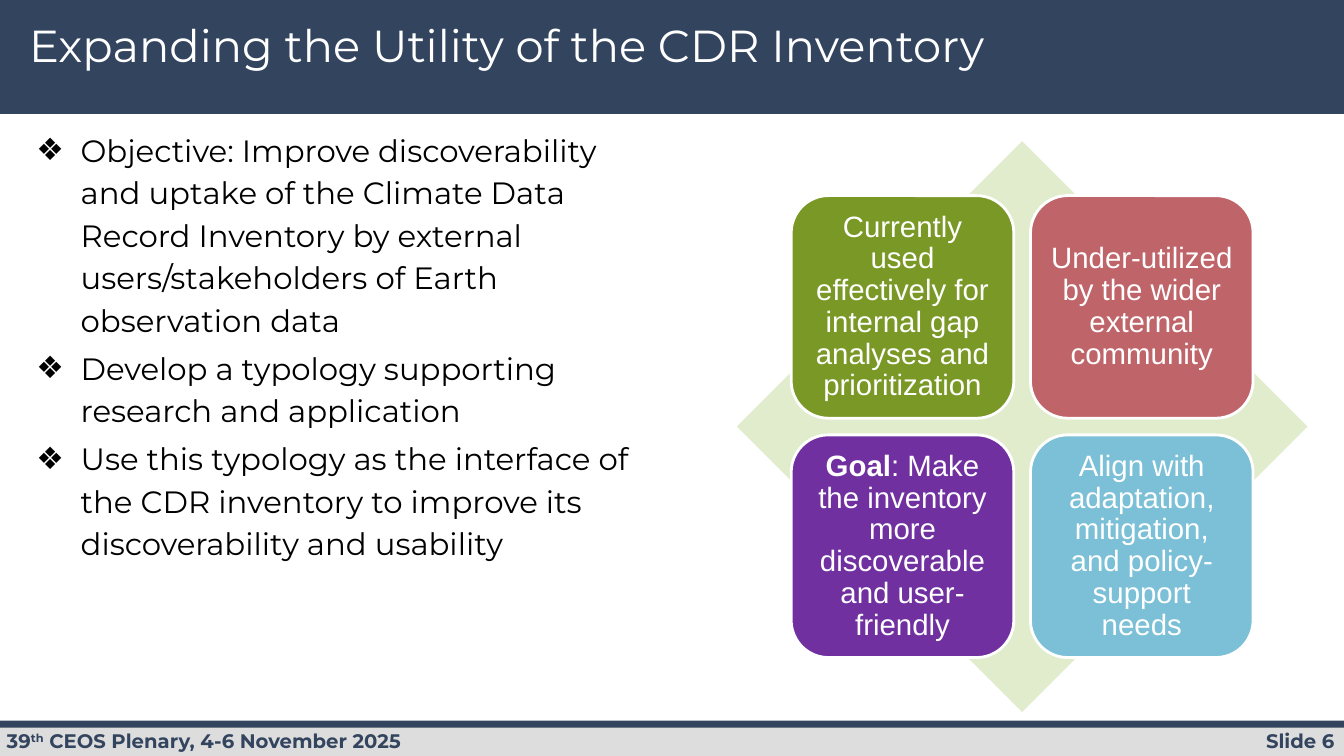
from lxml import etree
from pptx import Presentation
from pptx.dml.color import RGBColor
from pptx.enum.shapes import MSO_SHAPE
from pptx.enum.text import MSO_ANCHOR, MSO_AUTO_SIZE, PP_ALIGN
from pptx.oxml.ns import qn
from pptx.util import Cm, Pt

RECTANGLE = MSO_SHAPE.RECTANGLE
ROUNDED = MSO_SHAPE.ROUNDED_RECTANGLE
DIAMOND = MSO_SHAPE.DIAMOND
TOP, MIDDLE = MSO_ANCHOR.TOP, MSO_ANCHOR.MIDDLE
LEFT, CENTER, RIGHT = PP_ALIGN.LEFT, PP_ALIGN.CENTER, PP_ALIGN.RIGHT
NO_FIT = MSO_AUTO_SIZE.NONE

NAVY = RGBColor(0x33, 0x44, 0x5F)
GREY = RGBColor(0xDD, 0xDD, 0xDD)
WHITE = RGBColor(0xFF, 0xFF, 0xFF)
BLACK = RGBColor(0x00, 0x00, 0x00)
PALE_GREEN = RGBColor(0xE0, 0xEC, 0xCC)
GREEN = RGBColor(0x7A, 0x98, 0x26)
RED = RGBColor(0xBF, 0x65, 0x6A)
PURPLE = RGBColor(0x70, 0x30, 0xA0)
BLUE = RGBColor(0x7B, 0xC0, 0xD7)

HEADING_FONT = "Montserrat"
BOX_FONT = "Arial"

SLIDE_WIDTH, SLIDE_HEIGHT = 33.87, 19.05
BOX_SIZE, BOX_STEP = 5.61, 6.03
GRID_LEFT, GRID_TOP = 19.94, 4.93

OBJECTIVES = [
    "Objective: Improve discoverability and uptake of the Climate Data Record "
    "Inventory by external users/stakeholders of Earth observation data",
    "Develop a typology supporting research and application",
    "Use this typology as the interface of the CDR inventory to improve its "
    "discoverability and usability",
]

# Fill, bold lead-in and text of each box, row by row
BOXES = [
    (GREEN, "", "Currently used effectively for internal gap analyses and prioritization"),
    (RED, "", "Under-utilized by the wider external community"),
    (PURPLE, "Goal", ": Make the inventory more discoverable and user-friendly"),
    (BLUE, "", "Align with adaptation, mitigation, and policy-support needs"),
]


def add_run(para, text, font_name, size, color, bold=False):
    run = para.add_run()
    run.text = text
    run.font.name = font_name
    run.font.size = Pt(size)
    run.font.color.rgb = color
    run.font.bold = bold
    return run


def add_filled_shape(slide, kind, left, top, width, height, fill):
    shape = slide.shapes.add_shape(kind, Cm(left), Cm(top), Cm(width), Cm(height))
    shape.shadow.inherit = False
    shape.fill.solid()
    shape.fill.fore_color.rgb = fill
    shape.line.fill.background()
    return shape


def add_footer_box(slide, left, width, alignment):
    """Add an empty footer text box and return its paragraph."""
    box = slide.shapes.add_textbox(Cm(left), Cm(18.24), Cm(width), Cm(0.86))
    box.text_frame.word_wrap = True
    para = box.text_frame.paragraphs[0]
    para.alignment = alignment
    return para


def add_footer(slide):
    style = (HEADING_FONT, 14, NAVY, True)
    add_run(add_footer_box(slide, 28.52, 5.36, RIGHT), "Slide 6", *style)
    para = add_footer_box(slide, -0.08, 16.33, LEFT)
    add_run(para, "39", *style)
    ordinal = add_run(para, "th", *style)
    ordinal._r.get_or_add_rPr().set("baseline", "30000")
    add_run(para, " CEOS Plenary, 4-6 November 2025", *style)


def place_placeholder(slide, placeholder, left, top, width, height):
    """Position a placeholder, bring it to the front and return its text frame."""
    placeholder.left, placeholder.top = Cm(left), Cm(top)
    placeholder.width, placeholder.height = Cm(width), Cm(height)
    slide.shapes._spTree.append(placeholder._element)
    frame = placeholder.text_frame
    frame.word_wrap = True
    frame.auto_size = NO_FIT
    frame.vertical_anchor = TOP
    return frame


def set_bullet(para, character, color):
    properties = para._p.get_or_add_pPr()
    properties.set("marL", str(Cm(1.27)))
    properties.set("indent", str(Cm(-1.12)))
    bullet_color = etree.SubElement(properties, qn("a:buClr"))
    etree.SubElement(bullet_color, qn("a:srgbClr"), val=str(color))
    etree.SubElement(properties, qn("a:buFont"), typeface=BOX_FONT)
    etree.SubElement(properties, qn("a:buChar"), char=character)


def fill_title(slide):
    frame = place_placeholder(slide, slide.shapes.title, 0.48, 0.48, 26.09, 2.16)
    para = frame.paragraphs[0]
    para.alignment = LEFT
    para.line_spacing = 0.9
    add_run(para, "Expanding the Utility of the CDR Inventory", HEADING_FONT, 32, WHITE)


def fill_objectives(slide):
    frame = place_placeholder(slide, slide.placeholders[1], 0.51, 3.05, 16.28, 14.78)
    for index, text in enumerate(OBJECTIVES):
        para = frame.add_paragraph() if index else frame.paragraphs[0]
        set_bullet(para, "❖", BLACK)
        para.line_spacing = 1.15
        para.space_before = Pt(4 if index else 0)
        para.space_after = Pt(0)
        add_run(para, text, HEADING_FONT, 22, BLACK)


def add_box(slide, left, top, fill, lead, text):
    box = add_filled_shape(slide, ROUNDED, left, top, BOX_SIZE, BOX_SIZE, fill)
    box.adjustments[0] = 0.167
    box.line.color.rgb = WHITE
    box.line.width = Pt(2)
    frame = box.text_frame
    frame.word_wrap = True
    frame.vertical_anchor = MIDDLE
    frame.margin_left = frame.margin_right = Cm(0.23)
    frame.margin_top = frame.margin_bottom = Cm(0.23)
    para = frame.paragraphs[0]
    para.alignment = CENTER
    para.line_spacing = 0.9
    if lead:
        add_run(para, lead, BOX_FONT, 21, WHITE, bold=True)
    add_run(para, text, BOX_FONT, 21, WHITE)


def add_matrix(slide):
    add_filled_shape(slide, DIAMOND, 18.57, 3.56, 14.38, 14.38, PALE_GREEN)
    for index, (fill, lead, text) in enumerate(BOXES):
        row, column = divmod(index, 2)
        left = GRID_LEFT + column * BOX_STEP
        top = GRID_TOP + row * BOX_STEP
        add_box(slide, left, top, fill, lead, text)


def main():
    deck = Presentation()
    deck.slide_width, deck.slide_height = Cm(SLIDE_WIDTH), Cm(SLIDE_HEIGHT)
    slide = deck.slides.add_slide(deck.slide_layouts[1])
    add_filled_shape(slide, RECTANGLE, 0, 0, SLIDE_WIDTH, 2.87, NAVY)
    add_filled_shape(slide, RECTANGLE, 0, 18.26, SLIDE_WIDTH, 0.79, GREY)
    add_filled_shape(slide, RECTANGLE, 0, 18.16, SLIDE_WIDTH, 0.18, NAVY)
    add_footer(slide)
    fill_objectives(slide)
    fill_title(slide)
    add_matrix(slide)
    deck.save("out.pptx")


if __name__ == "__main__":
    main()
